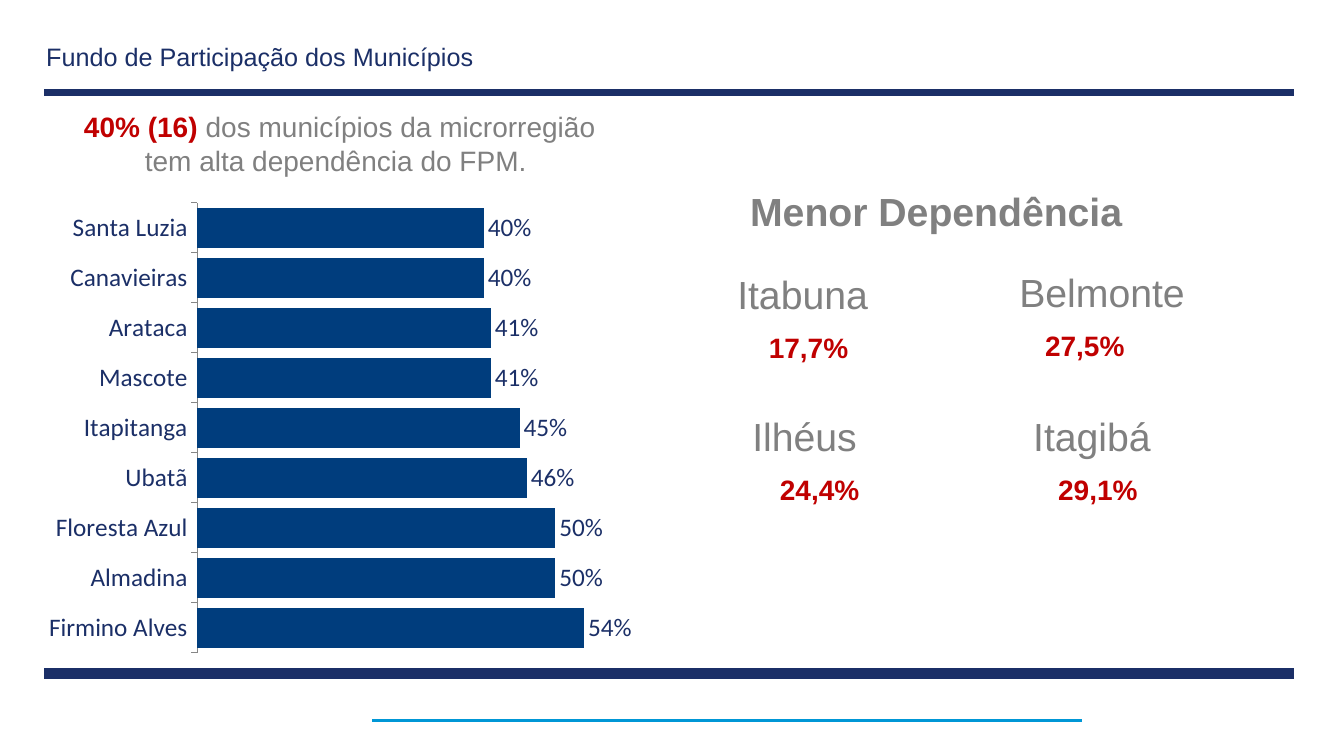
from pptx import Presentation
from pptx.chart.data import CategoryChartData
from pptx.dml.color import RGBColor
from pptx.enum.chart import XL_CHART_TYPE, XL_LABEL_POSITION, XL_TICK_MARK
from pptx.enum.shapes import MSO_CONNECTOR
from pptx.enum.text import MSO_ANCHOR, PP_ALIGN
from pptx.oxml import parse_xml
from pptx.oxml.ns import nsdecls, qn
from pptx.util import Inches, Pt

BAR = XL_CHART_TYPE.BAR_CLUSTERED
OUTSIDE_END = XL_LABEL_POSITION.OUTSIDE_END
TICK_OUTSIDE, TICK_NONE = XL_TICK_MARK.OUTSIDE, XL_TICK_MARK.NONE
STRAIGHT = MSO_CONNECTOR.STRAIGHT
TOP, MIDDLE = MSO_ANCHOR.TOP, MSO_ANCHOR.MIDDLE
LEFT, CENTER = PP_ALIGN.LEFT, PP_ALIGN.CENTER

COLORS = {"navy": "1B2F67", "sky": "0097D6", "red": "C00000",
          "gray": "808080", "bar": "003D7D", "axis": "868686"}

HIGH_DEPENDENCE = {
    "Firmino Alves": 0.54, "Almadina": 0.50, "Floresta Azul": 0.50,
    "Ubatã": 0.46, "Itapitanga": 0.45, "Mascote": 0.41,
    "Arataca": 0.41, "Canavieiras": 0.40, "Santa Luzia": 0.40,
}

# Name, share, left, top and width of the name
LOW_DEPENDENCE = [
    ("Itabuna", "17,7%", 7.07, 2.63, 1.78),
    ("Ilhéus", "24,4%", 7.18, 4.04, 1.60),
    ("Belmonte", "27,5%", 9.81, 2.61, 2.24),
    ("Itagibá", "29,1%", 9.94, 4.04, 1.78),
]


def color(name):
    return RGBColor.from_string(COLORS[name])


def add_rule(page, left, right, top, tint, weight):
    rule = page.shapes.add_connector(
        STRAIGHT, Inches(left), Inches(top), Inches(right), Inches(top))
    rule.line.color.rgb = color(tint)
    rule.line.width = Pt(weight)
    rule._element.spPr.append(parse_xml(f"<a:effectLst {nsdecls('a')}/>"))


def add_text(page, spans, left, top, width, height, *, size, align=CENTER,
             anchor=TOP, wrap=True, line_spacing=None):
    """Add one paragraph; spans are (text, color name, bold) tuples."""
    box = page.shapes.add_textbox(
        Inches(left), Inches(top), Inches(width), Inches(height))
    frame = box.text_frame
    frame.word_wrap = wrap
    frame.vertical_anchor = anchor
    para = frame.paragraphs[0]
    para.alignment = align
    para.line_spacing = line_spacing
    for text, tint, bold in spans:
        span = para.add_run()
        span.text = text
        span.font.name = "Arial"
        span.font.size = Pt(size)
        span.font.bold = bold
        span.font.color.rgb = color(tint)


def add_municipality(page, name, share, left, top, width):
    add_text(page, [(name, "gray", False)], left, top, width, 0.57, size=28)
    add_text(page, [(share, "red", True)], left + 0.37, top + 0.6, 1.16, 0.44,
             size=20, wrap=False)


def set_plot_area(chart, **fractions):
    items = "".join(f'<c:{key} val="{value}"/>'
                    for key, value in fractions.items())
    layout = parse_xml(
        f'<c:layout {nsdecls("c")}><c:manualLayout>'
        '<c:layoutTarget val="inner"/><c:xMode val="edge"/>'
        f'<c:yMode val="edge"/>{items}</c:manualLayout></c:layout>')
    plot_area = chart.element.find(".//" + qn("c:plotArea"))
    for old in plot_area.findall(qn("c:layout")):
        plot_area.remove(old)
    plot_area.insert(0, layout)


def add_bar_chart(page, values, left, top, width, height):
    data = CategoryChartData(number_format="0%")
    data.categories = list(values)
    data.add_series("Series 1", list(values.values()))
    chart = page.shapes.add_chart(
        BAR, Inches(left), Inches(top), Inches(width), Inches(height),
        data).chart
    chart.has_legend = False
    chart.has_title = False
    chart.font.name = "Calibri"
    chart.font.size = Pt(18)
    chart.font.color.rgb = color("navy")

    # Bars and their labels
    plot = chart.plots[0]
    plot.gap_width = 26
    plot.vary_by_categories = False
    fill = plot.series[0].format.fill
    fill.solid()
    fill.fore_color.rgb = color("bar")
    plot.has_data_labels = True
    labels = plot.data_labels
    labels.show_value = True
    labels.number_format = "0%"
    labels.number_format_is_linked = False
    labels.position = OUTSIDE_END

    # Axes
    names = chart.category_axis
    names.major_tick_mark = TICK_OUTSIDE
    names.minor_tick_mark = TICK_NONE
    names.format.line.color.rgb = color("axis")
    names.format.line.width = Pt(0.75)
    scale = chart.value_axis
    scale.minimum_scale = 0
    scale.maximum_scale = 0.6
    scale.has_major_gridlines = False
    scale.visible = False
    set_plot_area(chart, x=0.27, y=0.02, w=0.72, h=0.96)


def main():
    deck = Presentation()
    deck.slide_width, deck.slide_height = Inches(13.33), Inches(7.5)
    page = deck.slides.add_slide(deck.slide_layouts[6])

    # Frame lines
    add_rule(page, 0.44, 12.83, 0.92, "navy", 5)
    add_rule(page, 0.44, 12.83, 6.68, "navy", 8)
    add_rule(page, 3.69, 10.73, 7.15, "sky", 2)

    # Title and main message
    add_text(page, [("Fundo de Participação dos Municípios", "navy", False)],
             0.36, 0.42, 4.76, 0.31, size=18, align=LEFT, anchor=MIDDLE,
             line_spacing=0.9)
    add_text(page, [("40% (16) ", "red", True),
                    ("dos municípios da microrregião tem alta dependência "
                     "do FPM. ", "gray", False)],
             0.52, 1.04, 5.7, 0.77, size=20)

    # High dependence
    add_bar_chart(page, HIGH_DEPENDENCE, 0.36, 1.92, 5.92, 4.65)

    # Low dependence
    add_text(page, [("Menor Dependência", "gray", True)],
             6.57, 1.81, 5.43, 0.57, size=28)
    for municipality in LOW_DEPENDENCE:
        add_municipality(page, *municipality)

    deck.save("out.pptx")


if __name__ == "__main__":
    main()
